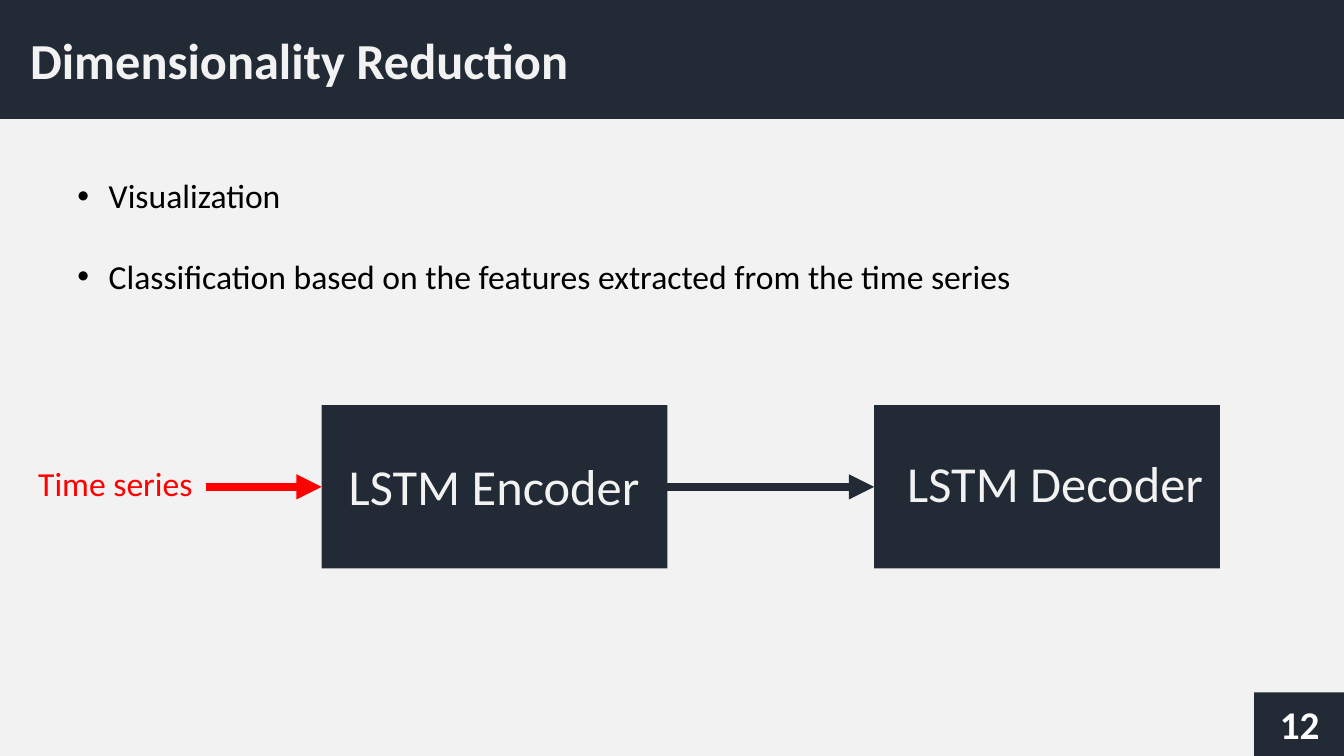
from lxml import etree
from pptx import Presentation
from pptx.dml.color import RGBColor
from pptx.enum.shapes import MSO_CONNECTOR, MSO_SHAPE
from pptx.enum.text import MSO_ANCHOR, PP_ALIGN
from pptx.oxml.ns import qn
from pptx.util import Inches, Pt

RECTANGLE = MSO_SHAPE.RECTANGLE
STRAIGHT = MSO_CONNECTOR.STRAIGHT
MIDDLE = MSO_ANCHOR.MIDDLE
CENTER = PP_ALIGN.CENTER

COLORS = {
    "background": "F2F2F2",
    "navy": "222A35",
    "red": "FF0000",
    "black": "000000",
    "white": "FFFFFF",
}


class SlideBuilder:
    """Draws styled elements on one slide."""

    font_name = "Calibri"

    def __init__(self, slide):
        self.slide = slide
        fill = slide.background.fill
        fill.solid()
        fill.fore_color.rgb = self.color("background")

    def color(self, name):
        return RGBColor.from_string(COLORS[name])

    def style(self, paragraph, size, color, bold=False):
        font = paragraph.font
        font.name = self.font_name
        font.size = Pt(size)
        font.bold = bold
        font.color.rgb = self.color(color)

    def block(self, left, top, width, height):
        shape = self.slide.shapes.add_shape(
            RECTANGLE, Inches(left), Inches(top), Inches(width), Inches(height))
        shape.shadow.inherit = False
        shape.fill.solid()
        shape.fill.fore_color.rgb = self.color("navy")
        shape.line.fill.background()
        return shape

    def text(self, left, top, width, height, lines, size, color, bold=False, wrap=False):
        box = self.slide.shapes.add_textbox(
            Inches(left), Inches(top), Inches(width), Inches(height))
        frame = box.text_frame
        frame.word_wrap = wrap
        frame.text = "\n".join(lines)
        for paragraph in frame.paragraphs:
            self.style(paragraph, size, color, bold)
        return frame

    def bullets(self, left, top, width, height, lines, size, color, gap):
        frame = self.text(left, top, width, height, lines, size, color)
        for index, paragraph in enumerate(frame.paragraphs):
            if index:
                paragraph.space_before = Pt(gap)
            properties = paragraph._p.get_or_add_pPr()
            indent = Inches(0.31)
            properties.set("marL", str(indent))
            properties.set("indent", str(-indent))
            bullet_font = etree.Element(qn("a:buFont"), typeface="Arial")
            bullet = etree.Element(qn("a:buChar"), char="•")
            defaults = properties.find(qn("a:defRPr"))
            defaults.addprevious(bullet_font)
            defaults.addprevious(bullet)

    def arrow(self, start, end, y, color):
        connector = self.slide.shapes.add_connector(
            STRAIGHT, Inches(start), Inches(y), Inches(end), Inches(y))
        connector.line.width = Pt(6)
        connector.line.color.rgb = self.color(color)
        line = connector.line._get_or_add_ln()
        etree.SubElement(line, qn("a:tailEnd"), type="triangle")
        etree.SubElement(connector._element.spPr, qn("a:effectLst"))

    def page_number(self, left, top, width, height, number):
        frame = self.block(left, top, width, height).text_frame
        frame.vertical_anchor = MIDDLE
        frame.text = str(number)
        paragraph = frame.paragraphs[0]
        paragraph.alignment = CENTER
        self.style(paragraph, 28, "white", bold=True)


def main():
    presentation = Presentation()
    presentation.slide_width = Inches(13.33)
    presentation.slide_height = Inches(7.5)
    builder = SlideBuilder(presentation.slides.add_slide(presentation.slide_layouts[6]))

    builder.block(0, 0, 13.33, 1.18)
    builder.text(0.2, 0.24, 8.41, 0.71, ["Dimensionality Reduction"], 36,
                 "background", bold=True, wrap=True)
    builder.bullets(0.67, 1.69, 9.55, 1.31, [
        "Visualization",
        "Classification based on the features extracted from the time series",
    ], 24, "black", gap=29)

    encoder_left, decoder_left = 3.19, 8.67
    box_top, box_width, box_height = 4.02, 3.43, 1.62
    flow_y = box_top + box_height / 2
    for left in (encoder_left, decoder_left):
        builder.block(left, box_top, box_width, box_height)
    builder.arrow(encoder_left + box_width, decoder_left, flow_y, "navy")
    builder.text(3.36, 4.47, 3.11, 0.71, ["LSTM Encoder"], 36, "background")
    builder.text(8.9, 4.44, 3.16, 0.71, ["LSTM Decoder"], 36, "background")
    builder.arrow(2.04, encoder_left, flow_y, "red")
    builder.text(0.28, 4.54, 1.75, 0.5, ["Time series"], 24, "red")

    builder.page_number(12.44, 6.87, 0.9, 0.63, 12)
    presentation.save("out.pptx")


if __name__ == "__main__":
    main()
